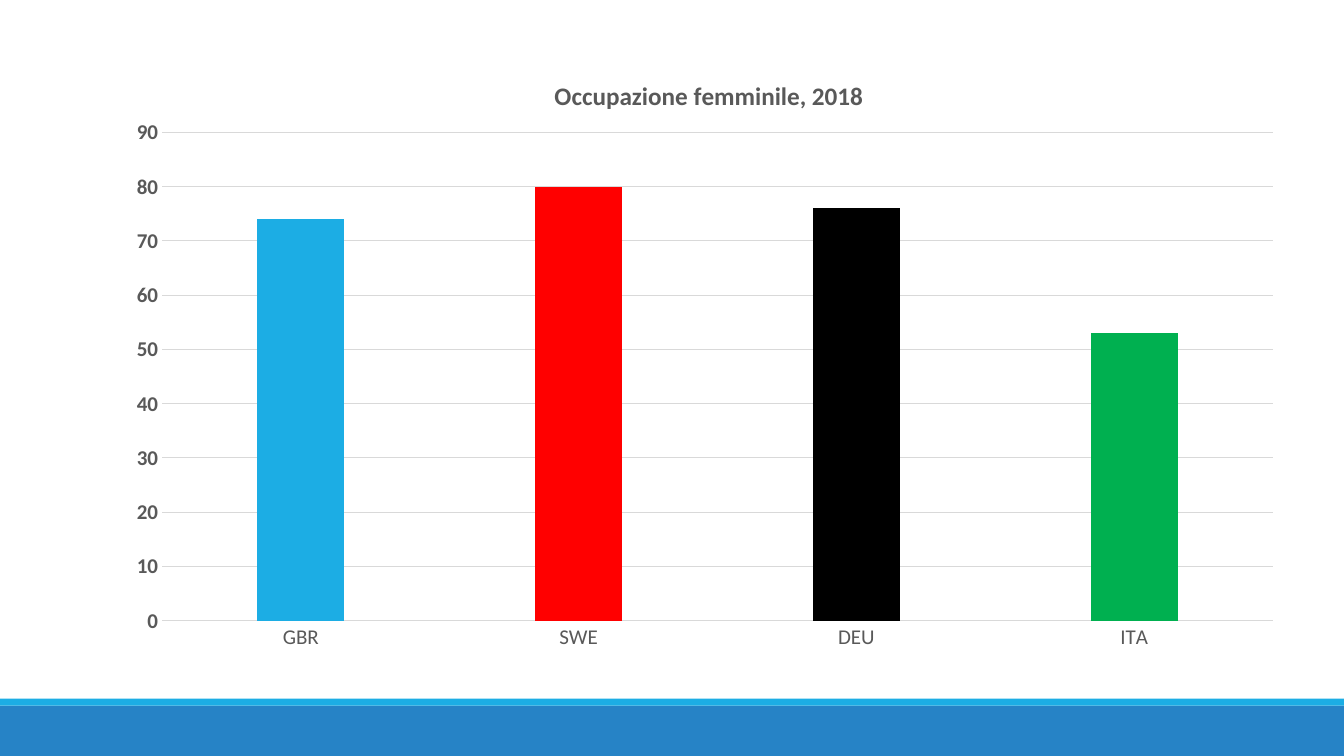
from pptx import Presentation
from pptx.chart import data as cd
from pptx.dml.color import RGBColor
from pptx.enum import chart as ce, shapes
from pptx.oxml import parse_xml
from pptx.oxml.ns import nsdecls, qn
from pptx.util import Pt

SKY = RGBColor(0x1C, 0xAD, 0xE4)
BLUE = RGBColor(0x26, 0x83, 0xC6)
RED = RGBColor(0xFF, 0x00, 0x00)
BLACK = RGBColor(0x00, 0x00, 0x00)
GREEN = RGBColor(0x00, 0xB0, 0x50)
GREY = RGBColor(0x59, 0x59, 0x59)
PALE = RGBColor(0xD9, 0xD9, 0xD9)

FACE = "Calibri"
TITLE = "Occupazione femminile, 2018"
RATES = [("GBR", 74, SKY), ("SWE", 80, RED), ("DEU", 76, BLACK), ("ITA", 53, GREEN)]
WIDTH, HEIGHT = 960, 540
BANDS = [(504, 36, BLUE), (499, 5, SKY)]
FRAME = (80.64, 35.28, 846, 437.76)


def style(font, size, bold):
    font.name = FACE
    font.size = Pt(size)
    font.bold = bold
    font.color.rgb = GREY


def place(node, index, target, **spots):
    old = node.find(qn("c:layout"))
    if old is not None:
        node.remove(old)
    inner = f'<c:layoutTarget val="{target}"/>' if target else ""
    modes = "".join(f'<c:{k}Mode val="edge"/>' for k in ("x", "y"))
    sizes = "".join(f'<c:{k} val="{v}"/>' for k, v in spots.items())
    node.insert(index, parse_xml(
        f'<c:layout {nsdecls("c")}><c:manualLayout>{inner}{modes}{sizes}'
        "</c:manualLayout></c:layout>"))


def main():
    deck = Presentation()
    deck.slide_width, deck.slide_height = Pt(WIDTH), Pt(HEIGHT)
    slide = deck.slides.add_slide(deck.slide_layouts[6])

    for top, tall, color in BANDS:
        band = slide.shapes.add_shape(
            shapes.MSO_SHAPE.RECTANGLE, 0, Pt(top), Pt(WIDTH), Pt(tall))
        band.shadow.inherit = False
        band.fill.solid()
        band.fill.fore_color.rgb = color
        band.line.fill.background()

    names, values, colors = zip(*RATES)
    data = cd.CategoryChartData()
    data.categories = names
    data.add_series("Series 1", values)
    chart = slide.shapes.add_chart(
        ce.XL_CHART_TYPE.COLUMN_CLUSTERED, *map(Pt, FRAME), data).chart
    style(chart.font, 10, False)
    chart.has_legend = False
    chart.has_title = True
    title = chart.chart_title
    title.include_in_layout = False
    title.text_frame.text = TITLE
    style(title.text_frame.paragraphs[0].font, 18, True)

    plot = chart.plots[0]
    plot.vary_by_categories = False
    plot.gap_width, plot.overlap = 219, -27
    bars = plot.series[0]
    bars.format.fill.solid()
    bars.format.fill.fore_color.rgb = SKY
    for i, color in enumerate(colors[1:], 1):
        fill = bars.points[i].format.fill
        fill.solid()
        fill.fore_color.rgb = color

    base, scale = chart.category_axis, chart.value_axis
    for axis, bold in ((base, False), (scale, True)):
        style(axis.tick_labels.font, 15, bold)
        axis.major_tick_mark = axis.minor_tick_mark = ce.XL_TICK_MARK.NONE
    scale.minimum_scale, scale.maximum_scale, scale.major_unit = 0, 90, 10
    scale.format.line.fill.background()
    scale.has_major_gridlines = True
    for line in (base.format.line, scale.major_gridlines.format.line):
        line.color.rgb = PALE
        line.width = Pt(0.75)

    area = chart.element.find(".//" + qn("c:plotArea"))
    place(area, 0, "inner", x=0.0415, y=0.1355, w=0.938, h=0.797)
    place(chart.element.find(".//" + qn("c:title")), 1, "", x=0.369, y=0.04)
    deck.save("out.pptx")


if __name__ == "__main__":
    main()
